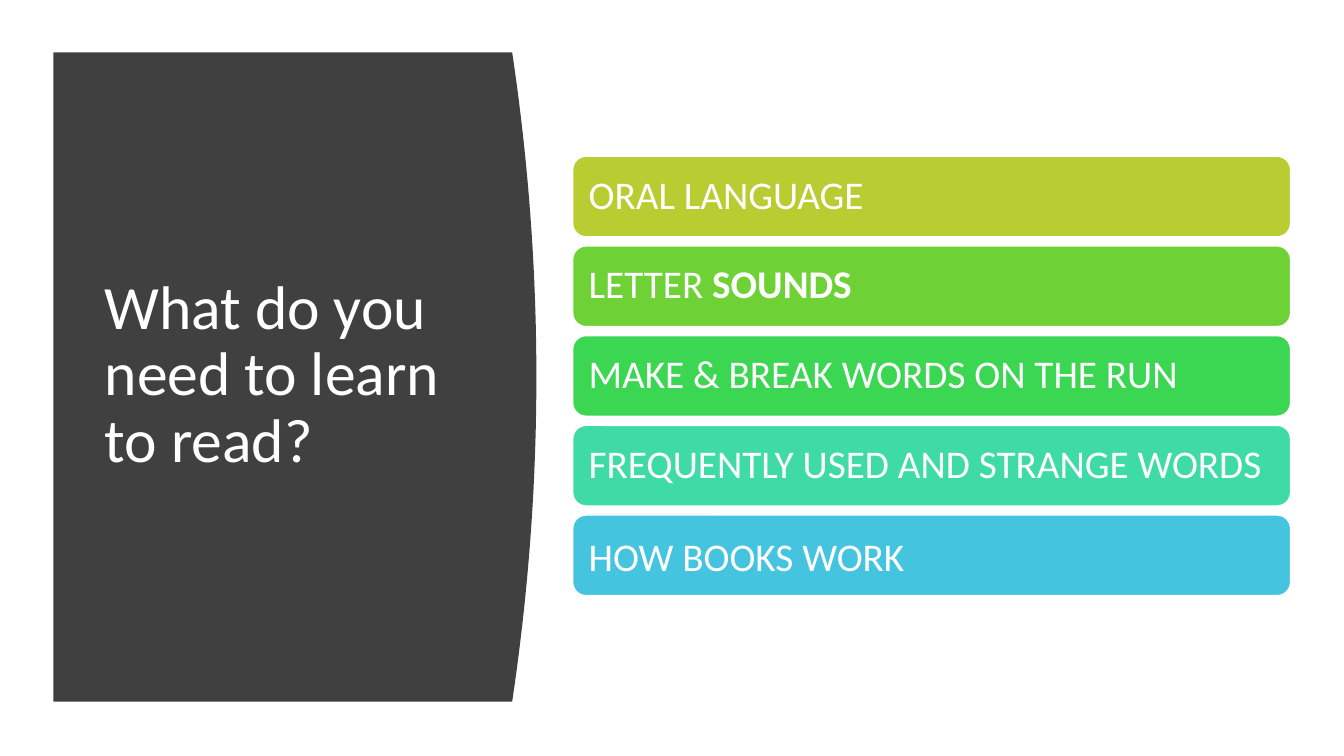
from dataclasses import dataclass

from pptx import Presentation
from pptx.dml.color import RGBColor as Color
from pptx.enum.shapes import MSO_SHAPE as Preset
from pptx.enum.text import MSO_ANCHOR as Anchor, PP_ALIGN as Align
from pptx.util import Inches, Pt


@dataclass(frozen=True)
class Theme:
    font: str = "Calibri"
    white: str = "FFFFFF"
    panel: str = "404040"
    title_size: int = 44
    bar_size: int = 28
    bar_line: int = 1
    tight: float = 0.9


THEME = Theme()
WIDTH, HEIGHT = 13.33, 7.5

PANEL_LEFT, PANEL_TOP, PANEL_BOTTOM = 0.53, 0.52, 6.96
PANEL_EDGE, PANEL_BULGE = 5.08, 0.24
CURVE_STEPS = 40

BAR_LEFT, BAR_TOP, BAR_WIDTH, BAR_HEIGHT = 5.68, 1.55, 7.12, 0.8
BAR_PITCH = 0.89
BAR_INSET = 0.12

TITLE = "What do you need to learn to read?"
BARS = [
    ("B9CD32", [("ORAL LANGUAGE", False)], THEME.tight),
    ("6ED236", [("LETTER ", False), ("SOUNDS", True)], THEME.tight),
    ("3BD652", [("MAKE & BREAK WORDS ON THE RUN", False)], THEME.tight),
    ("3FDBA6", [("FREQUENTLY USED AND STRANGE WORDS", False)], THEME.tight),
    ("44C4DF", [("HOW BOOKS WORK", False)], 1.0),
]


def paint(shape, color):
    shape.shadow.inherit = False
    shape.fill.solid()
    shape.fill.fore_color.rgb = Color.from_string(color)


def write(frame, spans, size, spacing):
    frame.word_wrap = True
    frame.vertical_anchor = Anchor.MIDDLE
    para = frame.paragraphs[0]
    para.alignment = Align.LEFT
    para.line_spacing = spacing
    for text, bold in spans:
        span = para.add_run()
        span.text = text
        span.font.name = THEME.font
        span.font.size = Pt(size)
        span.font.bold = bold
        span.font.color.rgb = Color.from_string(THEME.white)


def curve_point(step):
    share = step / CURVE_STEPS
    x = PANEL_EDGE + PANEL_BULGE * (1 - (2 * share - 1) ** 2)
    y = PANEL_TOP + (PANEL_BOTTOM - PANEL_TOP) * share
    return Inches(x), Inches(y)


def add_panel(page):
    outline = page.shapes.build_freeform(Inches(PANEL_LEFT), Inches(PANEL_TOP))
    curve = [curve_point(step) for step in range(CURVE_STEPS + 1)]
    outline.add_line_segments(curve + [(Inches(PANEL_LEFT), Inches(PANEL_BOTTOM))], close=True)
    panel = outline.convert_to_shape()
    paint(panel, THEME.panel)
    panel.line.fill.background()


def add_title(page):
    box = page.shapes.add_textbox(Inches(0.94), Inches(1.11), Inches(3.74), Inches(5.24))
    write(box.text_frame, [(TITLE, False)], THEME.title_size, THEME.tight)


def add_bar(page, row, color, spans, spacing):
    bar = page.shapes.add_shape(
        Preset.ROUNDED_RECTANGLE,
        Inches(BAR_LEFT),
        Inches(BAR_TOP + row * BAR_PITCH),
        Inches(BAR_WIDTH),
        Inches(BAR_HEIGHT),
    )
    paint(bar, color)
    bar.line.color.rgb = Color.from_string(THEME.white)
    bar.line.width = Pt(THEME.bar_line)
    frame = bar.text_frame
    frame.margin_left = frame.margin_right = Inches(BAR_INSET)
    frame.margin_top = frame.margin_bottom = Inches(BAR_INSET)
    write(frame, spans, THEME.bar_size, spacing)


def main():
    deck = Presentation()
    deck.slide_width, deck.slide_height = Inches(WIDTH), Inches(HEIGHT)
    page = deck.slides.add_slide(deck.slide_layouts[6])
    add_panel(page)
    add_title(page)
    for row, (color, spans, spacing) in enumerate(BARS):
        add_bar(page, row, color, spans, spacing)
    deck.save("out.pptx")


if __name__ == "__main__":
    main()
